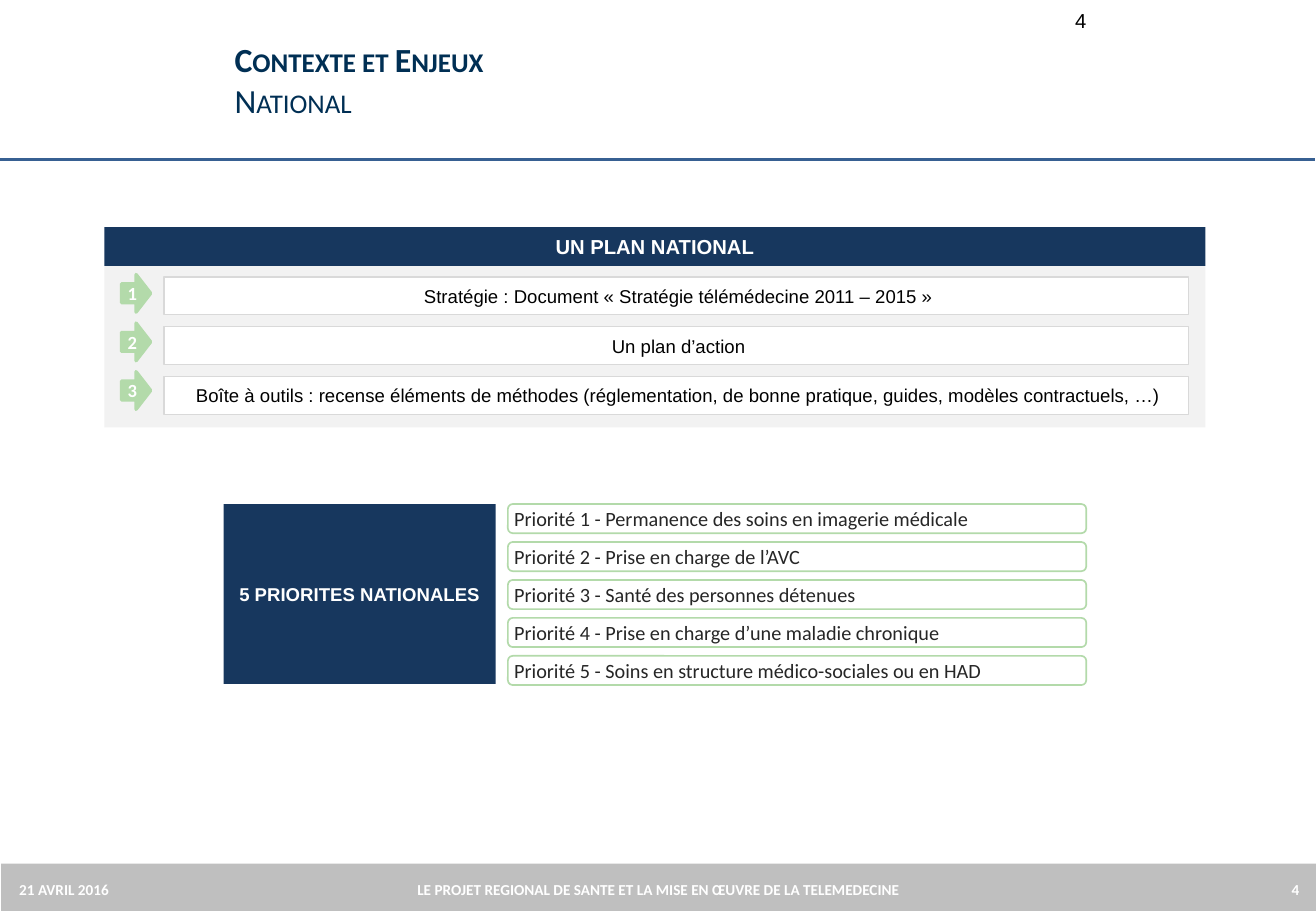
"""Build the slide on the national context of telemedicine."""
from dataclasses import dataclass

from pptx import Presentation
from pptx.dml.color import RGBColor
from pptx.enum.shapes import MSO_CONNECTOR, MSO_SHAPE
from pptx.enum.text import MSO_ANCHOR, PP_ALIGN
from pptx.oxml.ns import qn
from pptx.util import Inches, Pt
from lxml.etree import SubElement

NAVY = "17375E"
GREEN = "B3DAAA"
WHITE = "FFFFFF"
BLACK = "000000"
GREY = "BFBFBF"
LEFT, MID, RIGHT = PP_ALIGN.LEFT, PP_ALIGN.CENTER, PP_ALIGN.RIGHT
RECT = MSO_SHAPE.RECTANGLE

STEPS = [
    "Stratégie : Document « Stratégie télémédecine 2011 – 2015 »",
    "Un plan d’action",
    "Boîte à outils : recense éléments de méthodes (réglementation, "
    "de bonne pratique, guides, modèles contractuels, …)",
]
GOALS = [
    "Permanence des soins en imagerie médicale",
    "Prise en charge de l’AVC",
    "Santé des personnes détenues",
    "Prise en charge d’une maladie chronique",
    "Soins en structure médico-sociales ou en HAD",
]


@dataclass
class Label:
    text: str
    size: float
    font: str = "Calibri"
    tint: str = WHITE
    bold: bool = False
    align: PP_ALIGN = MID
    anchor: MSO_ANCHOR = MSO_ANCHOR.MIDDLE
    pad: tuple = (0.04, 0.04)


@dataclass
class Box:
    at: tuple
    fill: str
    label: Label | None = None
    kind: MSO_SHAPE = RECT
    edge: str = ""
    width: float = 1


def color(code: str) -> RGBColor:
    return RGBColor.from_string(code)


def write(shape, label: Label) -> None:
    frame = shape.text_frame
    frame.text = label.text
    frame.word_wrap = True
    frame.vertical_anchor = label.anchor
    frame.margin_left, frame.margin_right = map(Inches, label.pad)
    para = frame.paragraphs[0]
    para.alignment = label.align
    font = para.runs[0].font
    font.name, font.size, font.bold = label.font, Pt(label.size), label.bold
    font.color.rgb = color(label.tint)


def draw(slide, box: Box) -> None:
    shape = slide.shapes.add_shape(box.kind, *map(Inches, box.at))
    shape.shadow.inherit = False
    shape.fill.solid()
    shape.fill.fore_color.rgb = color(box.fill)
    if box.edge:
        shape.line.color.rgb = color(box.edge)
        shape.line.width = Pt(box.width)
    else:
        shape.line.fill.background()
    if box.label:
        write(shape, box.label)


def note(slide, at: tuple, label: Label) -> None:
    write(slide.shapes.add_textbox(*map(Inches, at)), label)


def head(slide) -> None:
    title = slide.shapes.title
    title.left, title.top, title.width, title.height = map(
        Inches, (1.83, 0.11, 8.46, 1.09))
    frame = title.text_frame
    frame.text = "Contexte et Enjeux\vNational"
    frame.vertical_anchor = MSO_ANCHOR.MIDDLE
    para = frame.paragraphs[0]
    para.alignment = LEFT
    for run, bold in zip(para.runs, (True, False)):
        font = run.font
        font.name, font.size, font.bold = "Calibri", Pt(20), bold
        font.color.rgb = color("002F54")
        run._r.get_or_add_rPr().set("cap", "small")
    rule = slide.shapes.add_connector(
        MSO_CONNECTOR.STRAIGHT, *map(Inches, (0, 1.31, 10.82, 1.31)))
    rule.line.color.rgb = color("376092")
    rule.line.width = Pt(1.75)
    SubElement(rule._element.spPr, qn("a:effectLst"))
    note(slide, (8.75, 0.02, 1.17, 0.36),
         Label("4", 12, "Arial", BLACK, align=LEFT,
               anchor=MSO_ANCHOR.TOP, pad=(0.1, 0.1)))


def plan(slide) -> None:
    draw(slide, Box((0.86, 2.19, 9.06, 1.33), "F2F2F2"))
    draw(slide, Box((0.86, 1.87, 9.06, 0.32), NAVY,
                    Label("UN PLAN NATIONAL", 12, "Arial", bold=True)))
    for i, text in enumerate(STEPS):
        draw(slide, Box((1.35, 2.28 + 0.41 * i, 8.43, 0.31), WHITE,
                        Label(text, 11, "Arial", BLACK, pad=(0.08, 0.04)),
                        edge="D9D9D9", width=0.75))
        draw(slide, Box((1, 2.26 + 0.4 * i, 0.24, 0.31), GREEN,
                        Label(str(i + 1), 11, bold=True, pad=(0, 0)),
                        MSO_SHAPE.RIGHT_ARROW, GREEN, 2))


def goals(slide) -> None:
    draw(slide, Box((1.84, 4.15, 2.24, 1.48), NAVY,
                    Label("5 PRIORITES NATIONALES", 11, "Arial", bold=True)))
    step = 1.25 / (len(GOALS) - 1)
    for i, text in enumerate(GOALS):
        label = Label(f"Priorité {i + 1} - {text}", 12, tint="262626", align=LEFT)
        draw(slide, Box((4.18, 4.15 + step * i, 4.76, 0.24), WHITE, label,
                        MSO_SHAPE.ROUNDED_RECTANGLE, GREEN))


def foot(slide) -> None:
    draw(slide, Box((0.01, 7.11, 10.83, 0.42), GREY))
    name = "LE PROJET REGIONAL DE SANTE ET LA MISE EN ŒUVRE DE LA TELEMEDECINE"
    for left, width, text, align in (
        (0.06, 1.88, "21 AVRIL 2016", LEFT),
        (2.45, 5.93, name, MID),
        (10.24, 0.55, "4", RIGHT),
    ):
        note(slide, (left, 7.14, width, 0.36),
             Label(text, 9, bold=True, align=align, pad=(0.1, 0.1)))


def main() -> None:
    deck = Presentation()
    deck.slide_width, deck.slide_height = Inches(10.83), Inches(7.5)
    slide = deck.slides.add_slide(deck.slide_layouts[5])
    for part in (head, plan, goals, foot):
        part(slide)
    deck.save("out.pptx")


if __name__ == "__main__":
    main()
